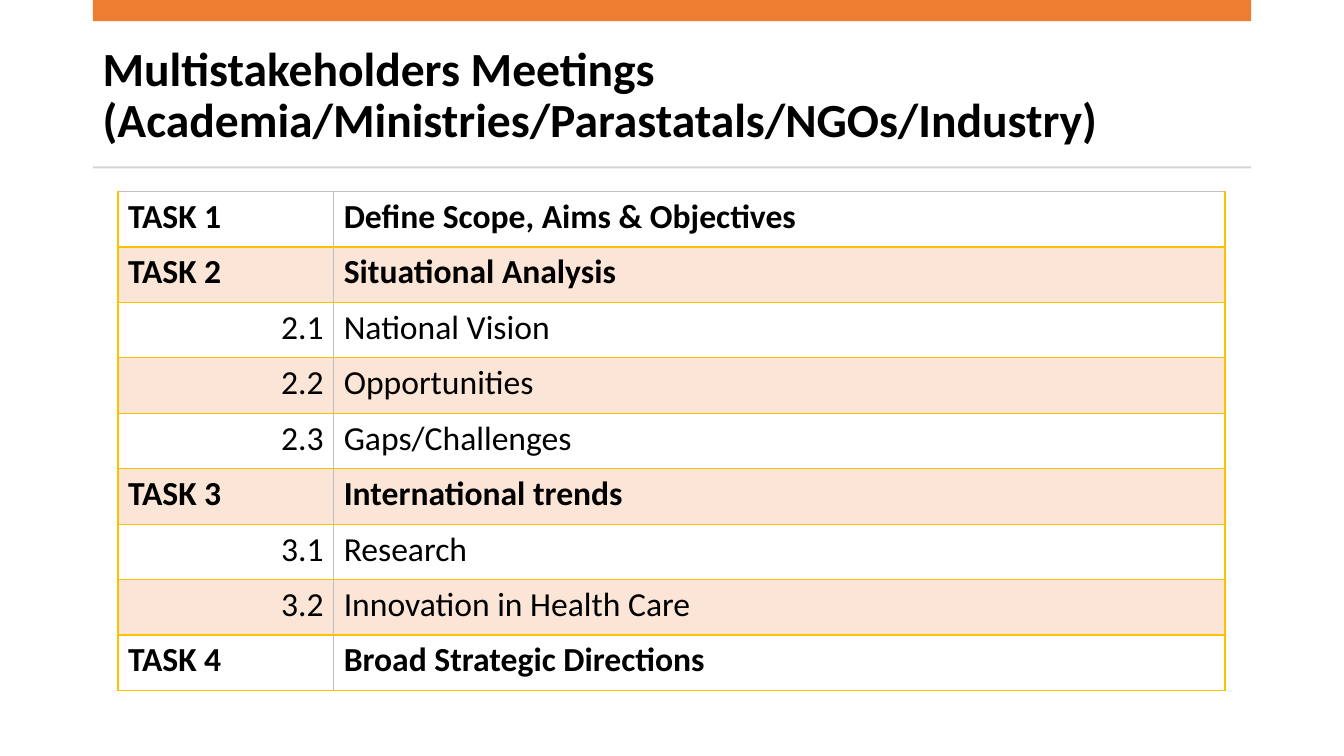
from dataclasses import dataclass

from lxml import etree
from pptx import Presentation
from pptx.dml.color import RGBColor
from pptx.enum.shapes import MSO_SHAPE
from pptx.enum.text import MSO_ANCHOR, PP_ALIGN
from pptx.oxml.ns import qn
from pptx.util import Inches, Pt

RECT = MSO_SHAPE.RECTANGLE
MIDDLE = MSO_ANCHOR.MIDDLE
LEFT, RIGHT = PP_ALIGN.LEFT, PP_ALIGN.RIGHT


@dataclass(frozen=True)
class Theme:
    font: str = "Calibri"
    ink: str = "000000"
    accent: str = "ED7D31"
    band: str = "FBE5D6"
    rule: str = "D5D5D5"
    border: str = "FFC000"
    divider: str = "BFBFBF"
    title: int = 34
    body: int = 24
    line: int = 1


@dataclass(frozen=True)
class Bar:
    top: float
    height: float
    color: str


@dataclass(frozen=True)
class Task:
    label: str
    text: str
    main: bool = False


THEME = Theme()
MARGIN, WIDTH = 0.92, 11.49
COLUMNS = (2.14, 8.84)
ROW = 0.55
TITLE = "Multistakeholders Meetings (Academia/Ministries/Parastatals/NGOs/Industry)"
BARS = (Bar(0, 0.21, THEME.accent), Bar(1.65, 0.02, THEME.rule))
TASKS = (
    Task("TASK 1", "Define Scope, Aims & Objectives", True),
    Task("TASK 2", "Situational Analysis", True),
    Task("2.1", "National Vision"),
    Task("2.2", "Opportunities"),
    Task("2.3", "Gaps/Challenges"),
    Task("TASK 3", "International trends", True),
    Task("3.1", "Research"),
    Task("3.2", "Innovation in Health Care"),
    Task("TASK 4", "Broad Strategic Directions", True),
)


def add_run(para, text: str, size: int, bold: bool) -> None:
    run = para.add_run()
    run.text = text
    run.font.name = THEME.font
    run.font.size = Pt(size)
    run.font.bold = bold
    run.font.color.rgb = RGBColor.from_string(THEME.ink)


def add_title(slide) -> None:
    box = slide.shapes.add_textbox(
        Inches(MARGIN), Inches(0.37), Inches(WIDTH), Inches(1.18))
    frame = box.text_frame
    frame.word_wrap = True
    frame.vertical_anchor = MIDDLE
    para = frame.paragraphs[0]
    para.line_spacing = 0.9
    add_run(para, TITLE, THEME.title, True)


def add_bar(slide, bar: Bar) -> None:
    shape = slide.shapes.add_shape(
        RECT, Inches(MARGIN), Inches(bar.top), Inches(WIDTH), Inches(bar.height))
    shape.shadow.inherit = False
    shape.fill.solid()
    shape.fill.fore_color.rgb = RGBColor.from_string(bar.color)
    shape.line.fill.background()


def set_edges(cell, colors: dict[str, str]) -> None:
    """Draw cell borders; edge tags must precede the fill, in schema order."""
    props = cell._tc.get_or_add_tcPr()
    for index, (tag, color) in enumerate(colors.items()):
        edge = etree.Element(qn(f"a:{tag}"), w=str(Pt(THEME.line)))
        fill = etree.SubElement(edge, qn("a:solidFill"))
        etree.SubElement(fill, qn("a:srgbClr"), val=color)
        props.insert(index, edge)


def fill_cell(cell, text: str, bold: bool, align, band: bool) -> None:
    if band:
        cell.fill.solid()
        cell.fill.fore_color.rgb = RGBColor.from_string(THEME.band)
    else:
        cell.fill.background()
    para = cell.text_frame.paragraphs[0]
    para.alignment = align
    para.space_before, para.space_after = Pt(6), Pt(12)
    add_run(para, text, THEME.body, bold)


def add_tasks(slide) -> None:
    frame = slide.shapes.add_table(
        len(TASKS), len(COLUMNS), Inches(1.17), Inches(1.9),
        Inches(sum(COLUMNS)), Inches(ROW * len(TASKS)))
    table = frame.table
    table.first_row = table.horz_banding = False
    for column, width in zip(table.columns, COLUMNS):
        column.width = Inches(width)
    for index, task in enumerate(TASKS):
        table.rows[index].height = Inches(ROW)
        label, text = table.cell(index, 0), table.cell(index, 1)
        band = index % 2 == 1
        fill_cell(label, task.label, task.main, LEFT if task.main else RIGHT, band)
        fill_cell(text, task.text, task.main, LEFT, band)
        top = THEME.border if index else THEME.divider
        set_edges(label, {"lnL": THEME.border, "lnR": THEME.divider,
                          "lnT": top, "lnB": THEME.border})
        set_edges(text, {"lnL": THEME.divider, "lnR": THEME.border,
                         "lnT": top, "lnB": THEME.border})


def main() -> None:
    deck = Presentation()
    deck.slide_width, deck.slide_height = Inches(13.33), Inches(7.5)
    slide = deck.slides.add_slide(deck.slide_layouts[6])
    add_title(slide)
    for bar in BARS:
        add_bar(slide, bar)
    add_tasks(slide)
    deck.save("out.pptx")


if __name__ == "__main__":
    main()
